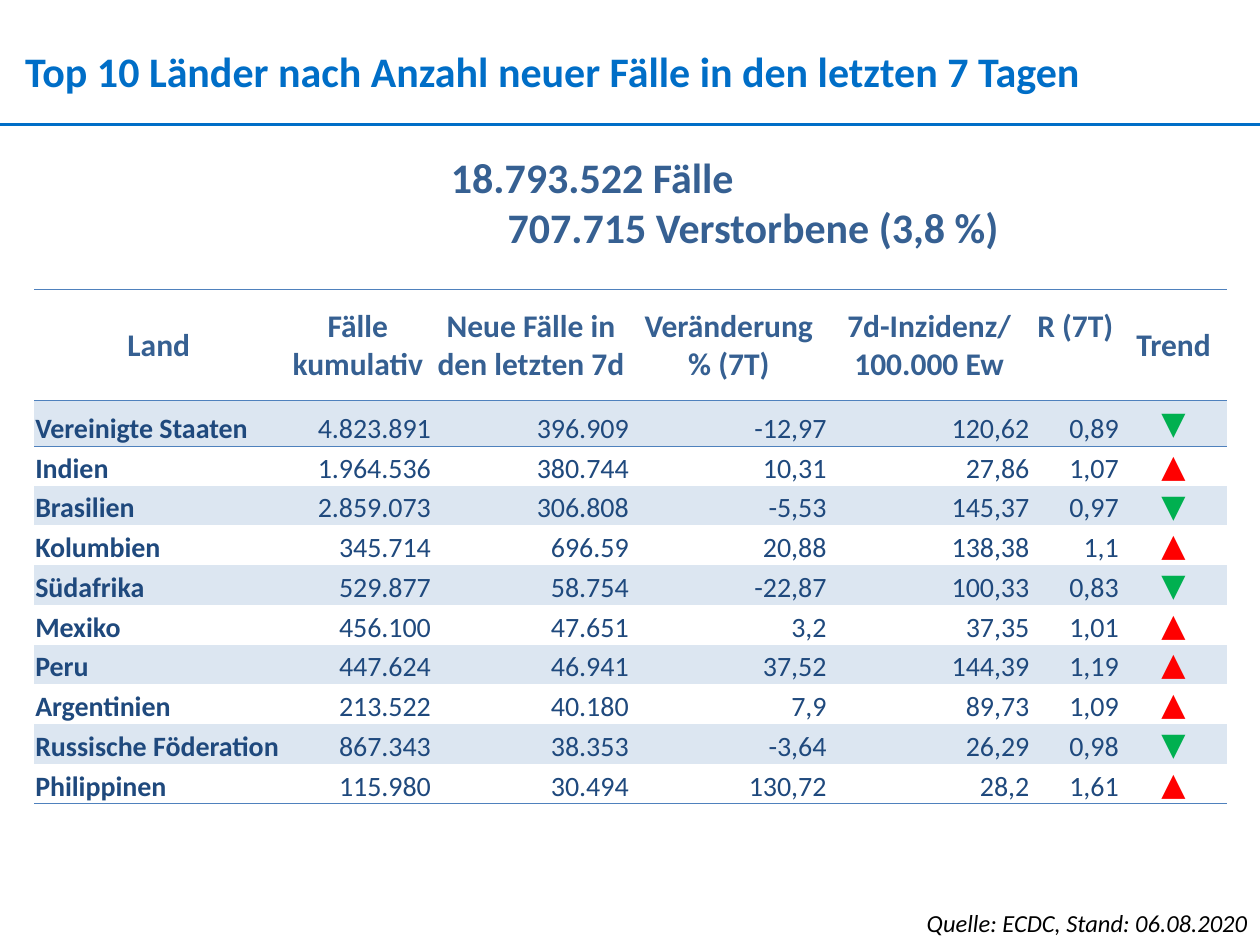
from pptx import Presentation
from pptx.dml.color import RGBColor
from pptx.enum.shapes import MSO_CONNECTOR
from pptx.enum.text import MSO_ANCHOR as Anchor, PP_ALIGN as Align
from pptx.oxml import parse_xml
from pptx.oxml.ns import nsdecls, qn
from pptx.util import Inches, Pt

FONT = "Calibri"
TITLE_BLUE = RGBColor(0x00, 0x6E, 0xC7)
HEADER_BLUE = RGBColor(0x36, 0x60, 0x92)
BODY_BLUE = RGBColor(0x1F, 0x49, 0x7D)
BAND_BLUE = RGBColor(0xDC, 0xE6, 0xF1)
BORDER_BLUE = RGBColor(0x4F, 0x81, 0xBD)
GREEN = RGBColor(0x00, 0xB0, 0x50)
RED = RGBColor(0xFF, 0x00, 0x00)
BLACK = RGBColor(0x00, 0x00, 0x00)
TREND_COLORS = {"▼": GREEN, "▲": RED}
NO_STYLE = "{2D5ABB26-0587-4C30-8999-92F81FD0307C}"

HEADERS = ["Land", "Fälle kumulativ", "Neue Fälle in den letzten 7d",
           "Veränderung % (7T)", "7d-Inzidenz/ 100.000 Ew", "R (7T)", "Trend"]
COUNTRIES = [
    ["Vereinigte Staaten", "4.823.891", "396.909", "-12,97", "120,62", "0,89", "▼"],
    ["Indien", "1.964.536", "380.744", "10,31", "27,86", "1,07", "▲"],
    ["Brasilien", "2.859.073", "306.808", "-5,53", "145,37", "0,97", "▼"],
    ["Kolumbien", "345.714", "696.59", "20,88", "138,38", "1,1", "▲"],
    ["Südafrika", "529.877", "58.754", "-22,87", "100,33", "0,83", "▼"],
    ["Mexiko", "456.100", "47.651", "3,2", "37,35", "1,01", "▲"],
    ["Peru", "447.624", "46.941", "37,52", "144,39", "1,19", "▲"],
    ["Argentinien", "213.522", "40.180", "7,9", "89,73", "1,09", "▲"],
    ["Russische Föderation", "867.343", "38.353", "-3,64", "26,29", "0,98", "▼"],
    ["Philippinen", "115.980", "30.494", "130,72", "28,2", "1,61", "▲"],
]
COLUMN_WIDTHS = [1.98, 1.18, 1.57, 1.57, 1.61, 0.71, 0.85]
ROW_HEIGHTS = [0.88, 0.36] + [0.27] * 9


class SlideBuilder:
    """Holds the text style and the current slide."""

    def __init__(self, slide, font=FONT):
        self.slide = slide
        self.font = font

    def format_text(self, text_frame, size, color, align=Align.LEFT, bold=False, italic=False):
        for paragraph in text_frame.paragraphs:
            paragraph.alignment = align
            for run in paragraph.runs:
                run.font.name = self.font
                run.font.size = Pt(size)
                run.font.bold = bold
                run.font.italic = italic
                run.font.color.rgb = color

    def title(self, text, left, top, width, height):
        shape = self.slide.shapes.title
        shape.left, shape.top = Inches(left), Inches(top)
        shape.width, shape.height = Inches(width), Inches(height)
        frame = shape.text_frame
        frame.text = text
        frame.margin_left = frame.margin_right = frame.margin_top = frame.margin_bottom = 0
        frame.vertical_anchor = Anchor.MIDDLE
        self.format_text(frame, 24, TITLE_BLUE, bold=True)

    def text(self, text, left, top, width, height, size, color, **style):
        box = self.slide.shapes.add_textbox(
            Inches(left), Inches(top), Inches(width), Inches(height))
        frame = box.text_frame
        frame.word_wrap = True
        frame.text = text
        self.format_text(frame, size, color, **style)
        return frame

    def rule(self, left, right, y, color, width):
        line = self.slide.shapes.add_connector(
            MSO_CONNECTOR.STRAIGHT, Inches(left), Inches(y), Inches(right), Inches(y))
        line.line.color.rgb = color
        line.line.width = Pt(width)
        line._element.spPr.append(parse_xml(f"<a:effectLst {nsdecls('a')}/>"))

    def cell(self, cell, text, size, color, align, anchor, bold, banded, edges):
        cell.text = text
        cell.vertical_anchor = anchor
        cell.margin_left = cell.margin_right = cell.margin_top = Inches(0.01)
        cell.margin_bottom = 0
        self.format_text(cell.text_frame, size, color, align, bold)
        if banded:
            cell.fill.solid()
            cell.fill.fore_color.rgb = BAND_BLUE
        else:
            cell.fill.background()
        # Borders come before the fill in the cell properties
        for position, edge in enumerate(edges):
            cell._tc.get_or_add_tcPr().insert(position, parse_xml(
                f'<a:{edge} {nsdecls("a")} w="{Pt(0.5)}"><a:solidFill>'
                f'<a:srgbClr val="{BORDER_BLUE}"/></a:solidFill></a:{edge}>'))

    def table(self, headers, records, left, top, widths, heights):
        table = self.slide.shapes.add_table(
            len(heights), len(widths), Inches(left), Inches(top),
            Inches(sum(widths)), Inches(sum(heights))).table
        table.first_row = table.horz_banding = False
        table._tbl.tblPr.find(qn("a:tableStyleId")).text = NO_STYLE
        for column, width in zip(table.columns, widths):
            column.width = Inches(width)
        for row, height in zip(table.rows, heights):
            row.height = Inches(height)

        # Header row
        for column, text in enumerate(headers):
            self.cell(table.cell(0, column), text, 18, HEADER_BLUE, Align.CENTER,
                      Anchor.MIDDLE, True, False, ["lnT", "lnB"])
        # The short R heading lines up with the first line of its neighbours
        table.cell(0, headers.index("R (7T)")).margin_bottom = Inches(0.31)

        # Country rows: name, figures, trend arrow
        for row, record in enumerate(records, start=1):
            edges = ["lnT"] if row == 1 else ["lnB"] if row == len(records) else []
            for column, text in enumerate(record):
                if text in TREND_COLORS:
                    style = (18, TREND_COLORS[text], Align.CENTER, Anchor.MIDDLE, False)
                else:
                    align = Align.RIGHT if column else Align.LEFT
                    style = (16, BODY_BLUE, align, Anchor.BOTTOM, column == 0)
                self.cell(table.cell(row, column), text, *style, row % 2 == 1, edges)


def main():
    presentation = Presentation()
    presentation.slide_width, presentation.slide_height = Inches(10), Inches(7.5)
    builder = SlideBuilder(presentation.slides.add_slide(presentation.slide_layouts[5]))

    # Country table
    builder.table(HEADERS, COUNTRIES, 0.27, 2.3, COLUMN_WIDTHS, ROW_HEIGHTS)

    # Title and rule
    builder.title("Top 10 Länder nach Anzahl neuer Fälle in den letzten 7 Tagen",
                  0.2, 0.36, 9.63, 0.4)
    builder.rule(0, 10, 0.99, TITLE_BLUE, 1.5)

    # Worldwide totals, the second line indented
    totals = builder.text("18.793.522 Fälle\n707.715 Verstorbene (3,8 %)",
                          3.48, 1.15, 4.59, 0.91, 24, HEADER_BLUE, bold=True)
    totals.margin_right = 0
    totals.paragraphs[1]._p.get_or_add_pPr().set("marL", str(Inches(0.45)))

    # Source
    builder.text("Quelle: ECDC, Stand: 06.08.2020", 6.46, 7.16, 3.54, 0.34,
                 14, BLACK, align=Align.RIGHT, italic=True)

    presentation.save("out.pptx")


if __name__ == "__main__":
    main()
